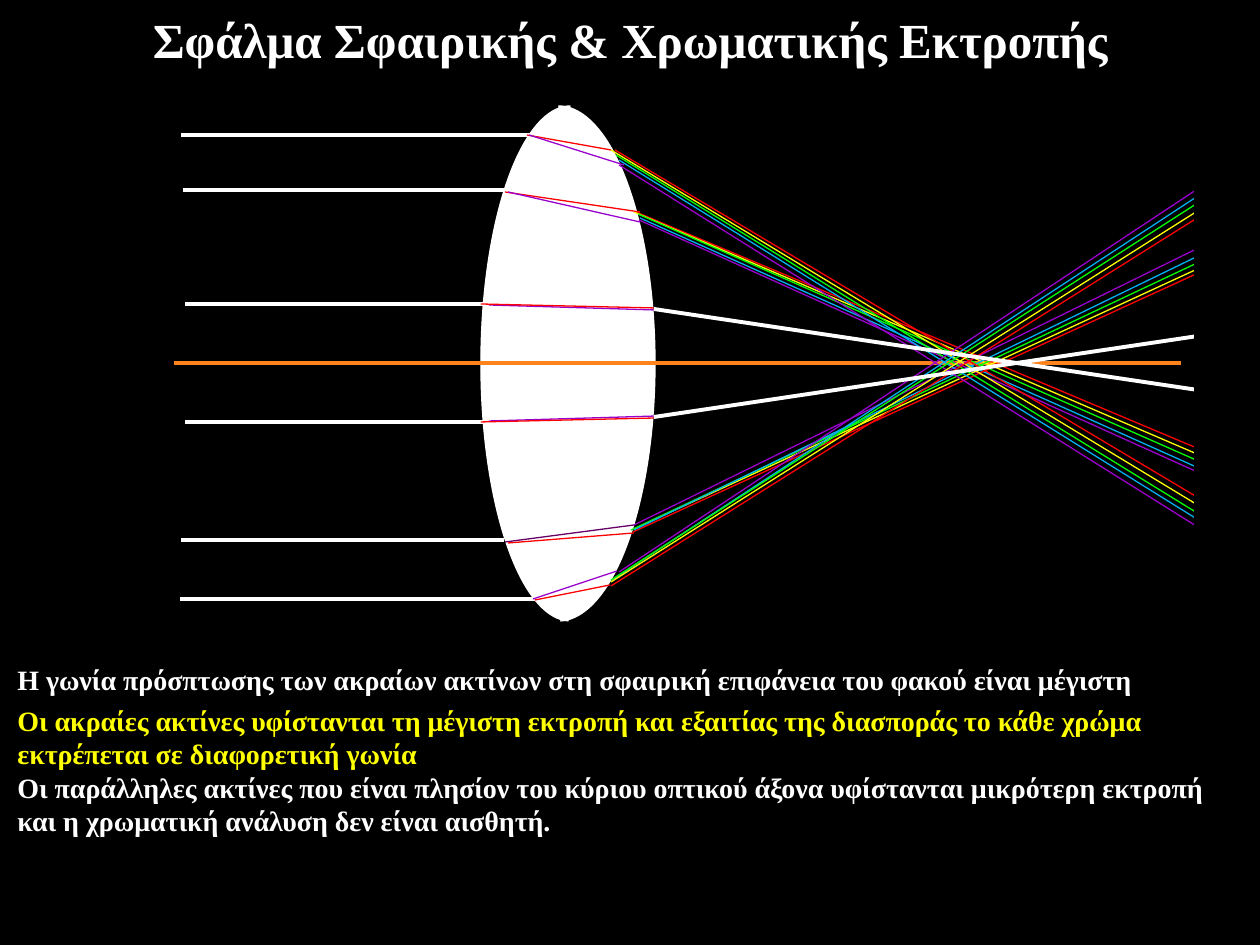
from collections import namedtuple

from lxml import etree
from pptx import Presentation
from pptx import util as u
from pptx.dml.color import RGBColor
from pptx.enum import shapes, text
from pptx.oxml.ns import qn

SCALE = 914400 / 126
FONT = "Times New Roman"
COLORS = {
    "black": "000000", "white": "FFFFFF", "axis": "FF831D",
    "red": "FF0000", "yellow": "FFFF00", "green": "00FF00",
    "blue": "00B0F0", "violet": "9900CC", "plum": "660066",
}
Box = namedtuple("Box", "left top width height")

UPPER_INNER = [
    ("white", 9, -173, 331, -173),
    ("red", 462, -151, 1037, 91),
    ("yellow", 460, -151, 1037, 97),
    ("green", 464, -149, 1038, 104),
    ("blue", 466, -145, 1038, 111),
    ("red", 331, -171, 466, -151),
    ("violet", 334, -171, 466, -141),
    ("violet", 465, -143, 1039, 116),
]
LOWER_INNER = [
    ("white", 7, 177, 330, 177),
    ("plum", 331, 179, 460, 162),
    ("red", 460, 170, 334, 180),
    ("violet", 460, 162, 1055, -130),
    ("red", 459, 169, 1057, -105),
    ("yellow", 460, 166, 1071, -116),
    ("green", 457, 167, 1057, -116),
    ("blue", 460, 167, 1055, -122),
]
UPPER_OUTER = [
    ("white", 7, -228, 356, -228),
    ("red", 353, -228, 437, -213),
    ("violet", 355, -228, 450, -198),
    ("violet", 445, -198, 1027, 166),
    ("red", 441, -213, 1033, 140),
    ("yellow", 437, -213, 1027, 144),
    ("green", 442, -208, 1033, 156),
    ("blue", 445, -203, 1039, 166),
]
LOWER_OUTER = [
    ("white", 6, 236, 363, 236),
    ("violet", 445, 209, 1022, -173),
    ("violet", 359, 236, 443, 208),
    ("red", 361, 237, 436, 222),
    ("red", 437, 223, 1039, -155),
    ("blue", 438, 217, 1027, -169),
    ("green", 437, 217, 1033, -166),
    ("yellow", 437, 219, 1033, -158),
]
PARAXIAL_UPPER = [
    ("white", 11, -59, 309, -59),
    ("violet", 315, -58, 482, -53),
    ("red", 307, -59, 481, -55),
    ("white", 480, -54, 1071, 34),
]
PARAXIAL_LOWER = [(c, x1, -y1, x2, -y2) for c, x1, y1, x2, y2 in PARAXIAL_UPPER]

NOTES = [
    (0, 43, "white", "Η γωνία πρόσπτωσης των ακραίων ακτίνων στη σφαιρική "
     "επιφάνεια του φακού είναι μέγιστη"),
    (41, 71, "yellow", "Οι ακραίες ακτίνες υφίστανται τη μέγιστη εκτροπή και "
     "εξαιτίας της διασποράς το κάθε χρώμα εκτρέπεται σε διαφορετική γωνία"),
    (108, 77, "white", "Οι παράλληλες ακτίνες που είναι πλησίον του κύριου "
     "οπτικού άξονα υφίστανται μικρότερη εκτροπή και η χρωματική ανάλυση "
     "δεν είναι αισθητή."),
]


def px(value):
    return u.Emu(round(value * SCALE))


def rgb(name):
    return RGBColor.from_string(COLORS[name])


def write(frame, words, size, color, align):
    frame.word_wrap = True
    frame.auto_size = text.MSO_AUTO_SIZE.NONE
    frame.vertical_anchor = text.MSO_ANCHOR.TOP
    para = frame.paragraphs[0]
    para.alignment = align
    span = para.add_run()
    span.text = words
    span.font.name = FONT
    span.font.size = u.Pt(size)
    span.font.bold = True
    span.font.color.rgb = rgb(color)


def add_ray(holder, box, color, x1, y1, x2, y2, weight):
    axis = box.top + box.height // 2
    ray = holder.shapes.add_connector(
        shapes.MSO_CONNECTOR.STRAIGHT,
        px(box.left + x1), px(axis + y1), px(box.left + x2), px(axis + y2))
    ray.line.color.rgb = rgb(color)
    ray.line.width = u.Pt(weight)
    etree.SubElement(ray._element.spPr, qn("a:effectLst"))


def add_solid(holder, kind, left, top, width, height, color, weight):
    solid = holder.shapes.add_shape(kind, px(left), px(top), px(width), px(height))
    solid.shadow.inherit = False
    solid.fill.solid()
    solid.fill.fore_color.rgb = rgb(color)
    solid.line.color.rgb = rgb(color)
    solid.line.width = u.Pt(weight)
    return solid


def add_title(page, box):
    title = page.shapes.title
    title.left, title.top, title.width, title.height = map(px, box)
    write(title.text_frame, "Σφάλμα Σφαιρικής & Χρωματικής Εκτροπής",
          28, "white", text.PP_ALIGN.CENTER)


def add_lens(page, box):
    lens = page.shapes.add_group_shape()
    for left, width, flipped in ((288, 193, False), (307, 179, True)):
        half = add_solid(lens, shapes.MSO_SHAPE.ARC, box.left + left, box.top,
                         width, box.height, "white", 0.75)
        half.adjustments[0] = 162
        half.adjustments[1] = 53.741
        if flipped:
            half._element.spPr.xfrm.set("flipH", "1")
    add_ray(lens, box, "axis", 0, 0, box.width, 0, 2.25)


def add_rays(page, box):
    for bundle in (UPPER_INNER + LOWER_INNER, UPPER_OUTER + LOWER_OUTER,
                   PARAXIAL_UPPER + PARAXIAL_LOWER):
        group = page.shapes.add_group_shape()
        for color, *ends in bundle:
            add_ray(group, box, color, *ends, 2.25 if color == "white" else 0.75)
    add_solid(page, shapes.MSO_SHAPE.RECTANGLE, box.left + 1022, box.top + 82,
              59, 345, "black", 2)


def add_notes(page, box):
    for top, height, color, words in NOTES:
        note = page.shapes.add_textbox(
            px(box.left), px(box.top + top), px(box.width), px(height))
        write(note.text_frame, words, 16, color, text.PP_ALIGN.LEFT)


def main():
    deck = Presentation()
    deck.slide_width, deck.slide_height = px(1260), px(945)
    page = deck.slides.add_slide(deck.slide_layouts[5])
    page.background.fill.solid()
    page.background.fill.fore_color.rgb = rgb("black")
    diagram = Box(174, 106, 1007, 515)
    add_title(page, Box(0, 3, 1260, 67))
    add_lens(page, diagram)
    add_rays(page, diagram)
    add_notes(page, Box(5, 656, 1247, 185))
    deck.save("out.pptx")


if __name__ == "__main__":
    main()
